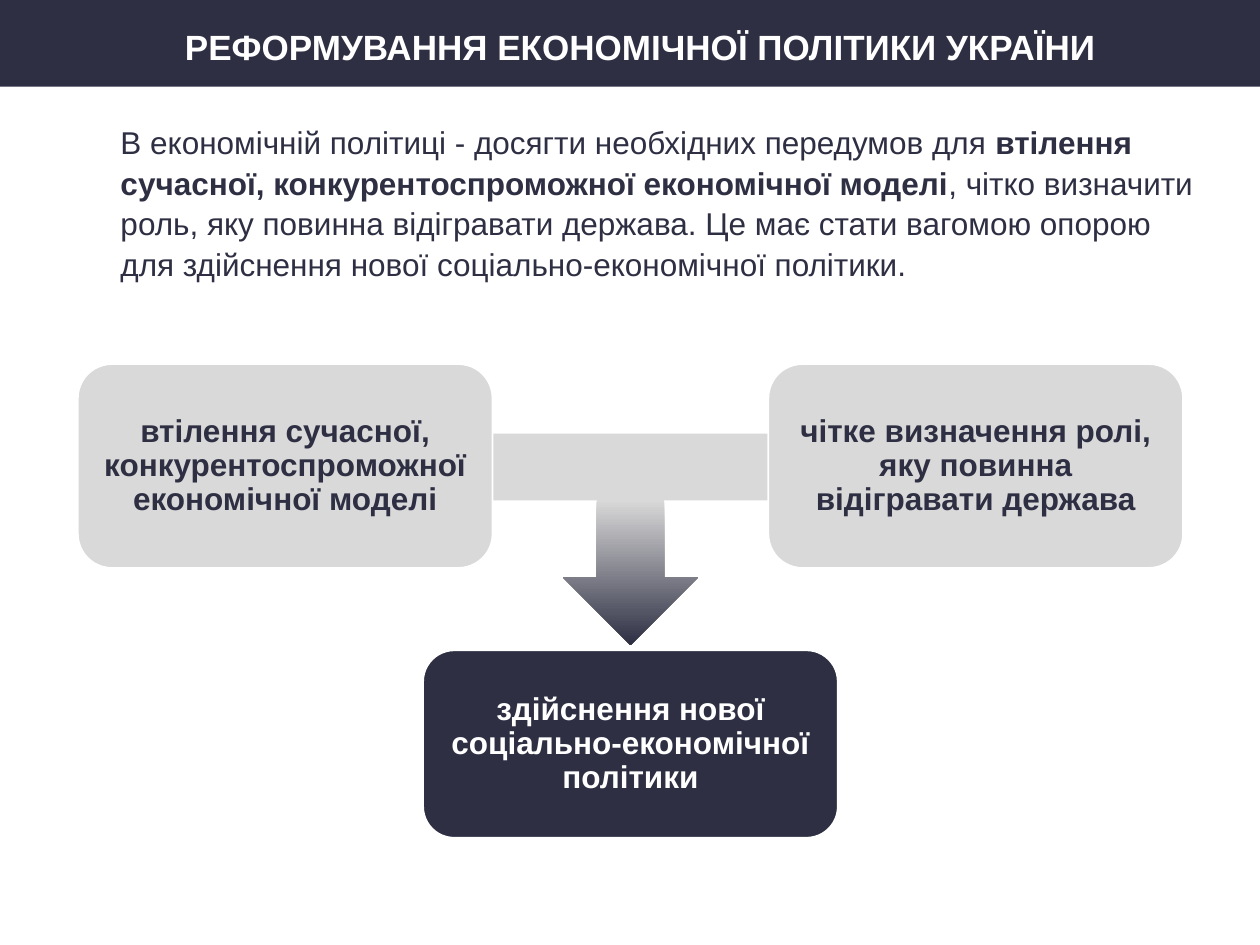
from pptx import Presentation
from pptx.dml.color import RGBColor
from pptx.enum.shapes import MSO_SHAPE
from pptx.enum.text import MSO_ANCHOR, PP_ALIGN
from pptx.util import Cm, Pt

RECTANGLE = MSO_SHAPE.RECTANGLE
ROUNDED = MSO_SHAPE.ROUNDED_RECTANGLE
DOWN_ARROW = MSO_SHAPE.DOWN_ARROW
MIDDLE = MSO_ANCHOR.MIDDLE
LEFT = PP_ALIGN.LEFT
CENTER = PP_ALIGN.CENTER

NAVY = RGBColor(0x2E, 0x2F, 0x43)
GREY = RGBColor(0xD9, 0xD9, 0xD9)
WHITE = RGBColor(0xFF, 0xFF, 0xFF)

presentation = Presentation()
presentation.slide_width = Cm(25.4)
presentation.slide_height = Cm(19.05)
slide = presentation.slides.add_slide(presentation.slide_layouts[6])


def write(paragraph, text, size=18, color=NAVY, bold=False, align=LEFT, spacing=1.07):
    paragraph.alignment = align
    paragraph.line_spacing = spacing
    run = paragraph.add_run()
    run.text = text
    run.font.name = "Arial"
    run.font.size = Pt(size)
    run.font.bold = bold
    run.font.color.rgb = color


def add_block(kind, left, top, width, height, fill):
    shape = slide.shapes.add_shape(kind, Cm(left), Cm(top), Cm(width), Cm(height))
    shape.shadow.inherit = False
    shape.fill.solid()
    shape.fill.fore_color.rgb = fill
    shape.line.fill.background()
    return shape


add_block(RECTANGLE, 0, 0, 25.4, 1.75, NAVY)

title = slide.shapes.add_textbox(Cm(3.4), Cm(0.33), Cm(19.02), Cm(1.17))
title.text_frame.word_wrap = False
write(title.text_frame.paragraphs[0], "РЕФОРМУВАННЯ ЕКОНОМІЧНОЇ ПОЛІТИКИ УКРАЇНИ",
      size=20, color=WHITE, bold=True, align=CENTER)

body = slide.shapes.add_textbox(Cm(2.18), Cm(2.31), Cm(22.33), Cm(4.37))
body.text_frame.word_wrap = True
for text, bold in [
    ("В економічній політиці - досягти необхідних передумов для ", False),
    ("втілення сучасної, конкурентоспроможної економічної моделі", True),
    (", чітко визначити роль, яку повинна відігравати держава. Це має стати вагомою "
     "опорою для здійснення нової соціально-економічної політики.", False),
]:
    write(body.text_frame.paragraphs[0], text, bold=bold)

arrow = add_block(DOWN_ARROW, 11.35, 10.08, 2.72, 2.92, GREY)
arrow.fill.gradient()
arrow.fill.gradient_angle = 270
for stop, color in zip(arrow.fill.gradient_stops, (GREY, NAVY)):
    stop.color.rgb = color

add_block(RECTANGLE, 9.32, 8.74, 6.96, 1.35, GREY)

BOX_LEFT, BOX_STEP, BOX_WIDTH = 1.57, 6.96, 8.36
boxes = [
    ("втілення сучасної, конкурентоспроможної економічної моделі", 7.34, 4.11, GREY, NAVY),
    ("здійснення нової соціально-економічної політики", 13.11, 3.78, NAVY, WHITE),
    ("чітке визначення ролі, яку повинна відігравати держава", 7.34, 4.11, GREY, NAVY),
]
for index, (text, top, height, fill, color) in enumerate(boxes):
    box = add_block(ROUNDED, BOX_LEFT + index * BOX_STEP, top, BOX_WIDTH, height, fill)
    box.line.color.rgb = WHITE
    box.line.width = Pt(1)
    frame = box.text_frame
    frame.word_wrap = True
    frame.vertical_anchor = MIDDLE
    frame.margin_left = frame.margin_right = Cm(0.18)
    frame.margin_top = frame.margin_bottom = Cm(0.18)
    write(frame.paragraphs[0], text, color=color, bold=True, align=CENTER, spacing=0.9)

presentation.save("out.pptx")
